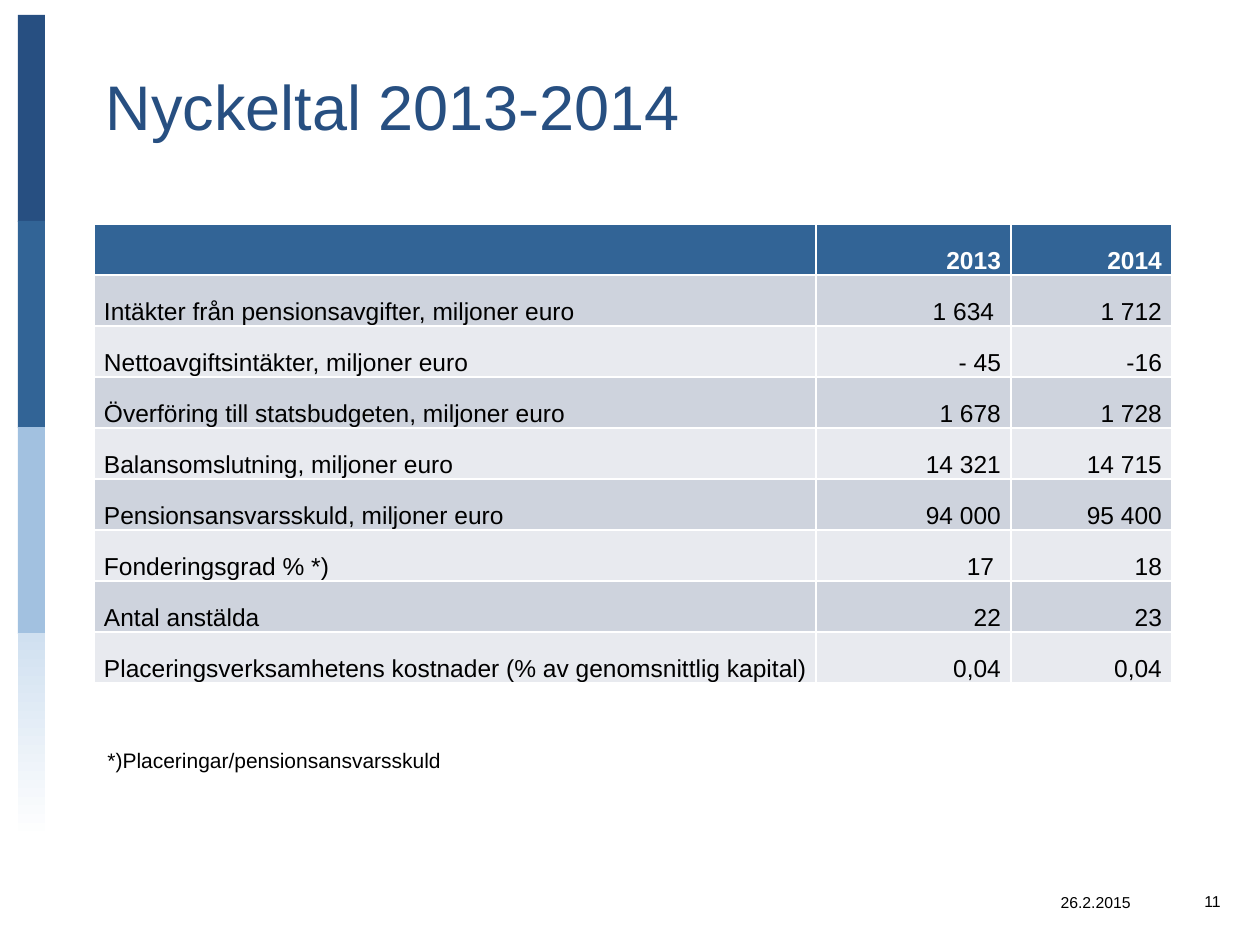
from dataclasses import dataclass
from pptx import Presentation
from pptx import util as u
from pptx.dml.color import RGBColor
from pptx.enum import shapes, text

SCALE = 914400 / 126
FONT = "Arial"
LEFT, RIGHT = text.PP_ALIGN.LEFT, text.PP_ALIGN.RIGHT
TOP, MID = text.MSO_ANCHOR.TOP, text.MSO_ANCHOR.MIDDLE
NAVY, BLUE, SKY, PALE = "274F81", "326496", "A2C1E0", "D0E0F0"
WHITE, BLACK = "FFFFFF", "000000"
BANDS = ("CED3DD", "E8EAEF")


@dataclass
class Box:
    x: int
    y: int
    w: int
    h: int

    def emu(self) -> tuple:
        return tuple(px(n) for n in (self.x, self.y, self.w, self.h))


@dataclass
class Note:
    box: Box
    words: str
    size: int
    align: int = RIGHT
    anchor: int = MID
    wrap: bool = True


def px(n: int) -> u.Emu:
    return u.Emu(round(n * SCALE))


def tint(code: str) -> RGBColor:
    return RGBColor.from_string(code)


def paint(fill, code: str) -> None:
    fill.solid()
    fill.fore_color.rgb = tint(code)


def write(frame, words: str, size: int, code: str, align: int, bold: bool = False) -> None:
    para = frame.paragraphs[0]
    para.alignment = align
    run = para.add_run()
    run.text = words
    run.font.name, run.font.size, run.font.bold = FONT, u.Pt(size), bold
    run.font.color.rgb = tint(code)


def add_bar(slide, box: Box):
    bar = slide.shapes.add_shape(shapes.MSO_SHAPE.RECTANGLE, *box.emu())
    bar.shadow.inherit = False
    bar.line.fill.background()
    return bar


def add_note(slide, note: Note) -> None:
    frame = slide.shapes.add_textbox(*note.box.emu()).text_frame
    frame.word_wrap = note.wrap
    frame.vertical_anchor = note.anchor
    write(frame, note.words, note.size, BLACK, note.align)


def add_grid(slide, box: Box, cols: tuple, rows: list) -> None:
    grid = slide.shapes.add_table(len(rows), len(cols), *box.emu()).table
    for col, wide in zip(grid.columns, cols):
        col.width = px(wide)
    for r, row in enumerate(rows):
        grid.rows[r].height = px(box.h // len(rows))
        head = r == 0
        for c, words in enumerate(row):
            cell = grid.cell(r, c)
            paint(cell.fill, BLUE if head else BANDS[(r - 1) % 2])
            cell.vertical_anchor = text.MSO_ANCHOR.BOTTOM
            cell.margin_top = cell.margin_bottom = 0
            cell.margin_left = px(0 if c else 10)
            cell.margin_right = px(10 if c else 0)
            if words:
                write(cell.text_frame, words, 14, WHITE if head else BLACK,
                      RIGHT if c else LEFT, head)


ROWS = [
    ("", "2013", "2014"),
    ("Intäkter från pensionsavgifter, miljoner euro", "1 634 ", "1 712"),
    ("Nettoavgiftsintäkter, miljoner euro", "- 45", "-16"),
    ("Överföring till statsbudgeten, miljoner euro", "1 678", "1 728"),
    ("Balansomslutning, miljoner euro", "14 321", "14 715"),
    ("Pensionsansvarsskuld, miljoner euro", "94 000", "95 400"),
    ("Fonderingsgrad % *)", "17 ", "18"),
    ("Antal anstälda", "22", "23"),
    ("Placeringsverksamhetens kostnader (% av genomsnittlig kapital)", "0,04", "0,04"),
]
NOTES = [
    Note(Box(1154, 876, 79, 50), "11", 9),
    Note(Box(95, 741, 360, 38), "*)Placeringar/pensionsansvarsskuld", 12, LEFT, TOP, False),
    Note(Box(1023, 877, 120, 50), "26.2.2015", 9),
]


def main() -> None:
    deck = Presentation()
    deck.slide_width, deck.slide_height = px(1260), px(945)
    slide = deck.slides.add_slide(deck.slide_layouts[5])

    # Side stripe, fading out at the foot
    for i, code in enumerate((NAVY, BLUE, SKY, PALE)):
        bar = add_bar(slide, Box(18, 15 + 206 * i, 27, 207))
        if code == PALE:
            bar.fill.gradient()
            bar.fill.gradient_angle = 90
            for stop, hue, spot in zip(bar.fill.gradient_stops, (WHITE, PALE), (0, 1)):
                stop.color.rgb = tint(hue)
                stop.position = spot
        else:
            paint(bar.fill, code)

    # Title
    title = slide.shapes.title
    title.left, title.top, title.width, title.height = Box(93, 16, 1104, 179).emu()
    title.text_frame.auto_size = text.MSO_AUTO_SIZE.NONE
    title.text_frame.vertical_anchor = MID
    write(title.text_frame, "Nyckeltal 2013-2014", 36, NAVY, LEFT)

    # Key figures
    add_grid(slide, Box(94, 224, 1078, 459), (722, 195, 161), ROWS)

    # Footnote, date and page number
    for note in NOTES:
        add_note(slide, note)

    deck.save("out.pptx")


if __name__ == "__main__":
    main()
